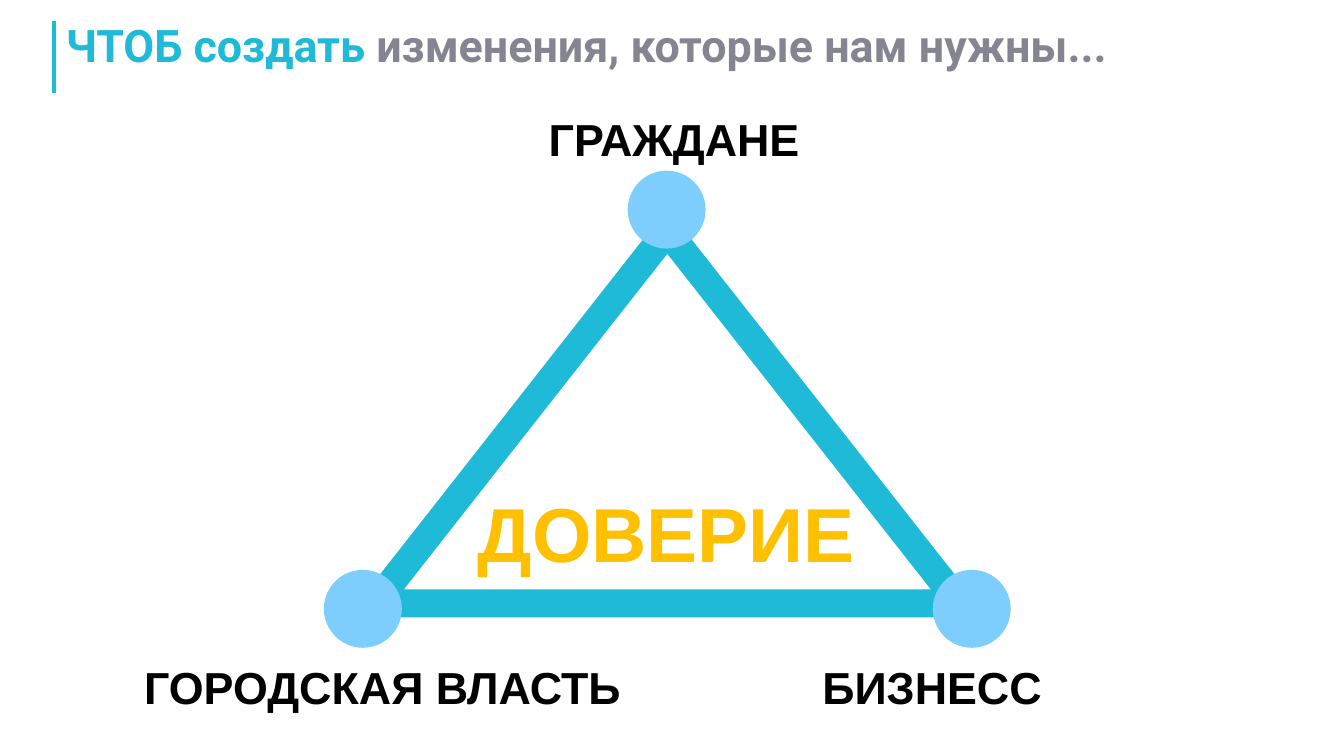
from pptx import Presentation
from pptx.dml.color import RGBColor
from pptx.enum.shapes import MSO_CONNECTOR, MSO_SHAPE
from pptx.enum.text import MSO_ANCHOR, PP_ALIGN
from pptx.oxml.ns import qn
from pptx.util import Inches, Pt
from lxml.etree import SubElement

TEAL = RGBColor(0x1F, 0xBA, 0xD7)
SKY = RGBColor(0x7E, 0xCE, 0xFD)
GOLD = RGBColor(0xFF, 0xC0, 0x00)
GREY = RGBColor(0x85, 0x85, 0x91)
BLACK = RGBColor(0, 0, 0)

deck = Presentation()
deck.slide_width = Inches(10)
deck.slide_height = deck.slide_width * 9 // 16
slide = deck.slides.add_slide(deck.slide_layouts[6])
shapes = slide.shapes


def add_text(box, runs, size, font, pad, align, anchor=MSO_ANCHOR.TOP):
    """Add a bold text box; runs are (words, colour) pairs."""
    frame = shapes.add_textbox(*map(Inches, box)).text_frame
    frame.word_wrap = True
    frame.vertical_anchor = anchor
    frame.margin_left = frame.margin_right = Inches(pad)
    frame.margin_top = frame.margin_bottom = Inches(pad)
    para = frame.paragraphs[0]
    para.alignment = align
    for words, colour in runs:
        run = para.add_run()
        run.text = words
        run.font.name, run.font.size, run.font.bold = font, Pt(size), True
        run.font.color.rgb = colour
    return para


# Triangle of trust
trust = shapes.add_shape(MSO_SHAPE.ISOSCELES_TRIANGLE,
                         *map(Inches, (2.79, 1.72, 4.35, 2.77)))
trust.shadow.inherit = False
trust.fill.background()
trust.line.color.rgb = TEAL
trust.line.width = Pt(15)
add_text((3.32, 3.57, 3.28, 1.59), [("ДОВЕРИЕ", GOLD)],
         41, "Arial", 0.05, PP_ALIGN.CENTER)

# Title with its upright bar
title = add_text((0.44, 0.13, 9.07, 0.5),
                 [("ЧТОБ создать ", TEAL),
                  ("изменения, которые нам нужны...", GREY)],
                 24, "Roboto", 0.05, PP_ALIGN.LEFT)
title.line_spacing = 0.9
bar = shapes.add_connector(MSO_CONNECTOR.STRAIGHT, Inches(0.4), Inches(0.16),
                           Inches(0.4), Inches(0.69))
bar.line.color.rgb = TEAL
bar.line.width = Pt(2.25)
SubElement(bar._element.spPr, qn("a:effectLst"))

# Corners: label, label box (left, top, width), dot (left, top)
dot = 0.58
corners = [
    ("ГРАЖДАНЕ", (3.76, 0.74, 2.51), (4.67, 1.27)),
    ("ГОРОДСКАЯ ВЛАСТЬ", (0.85, 4.82, 3.99), (2.41, 4.24)),
    ("БИЗНЕСС", (5.79, 4.82, 2.29), (6.94, 4.24)),
]
for label, box, spot in corners:
    add_text((*box, dot), [(label, BLACK)], 24, "Arial", 0.1,
             PP_ALIGN.CENTER, MSO_ANCHOR.MIDDLE)
for label, box, spot in corners:
    node = shapes.add_shape(MSO_SHAPE.OVAL, *map(Inches, (*spot, dot, dot)))
    node.shadow.inherit = False
    node.fill.solid()
    node.fill.fore_color.rgb = SKY
    node.line.fill.background()

deck.save("out.pptx")
